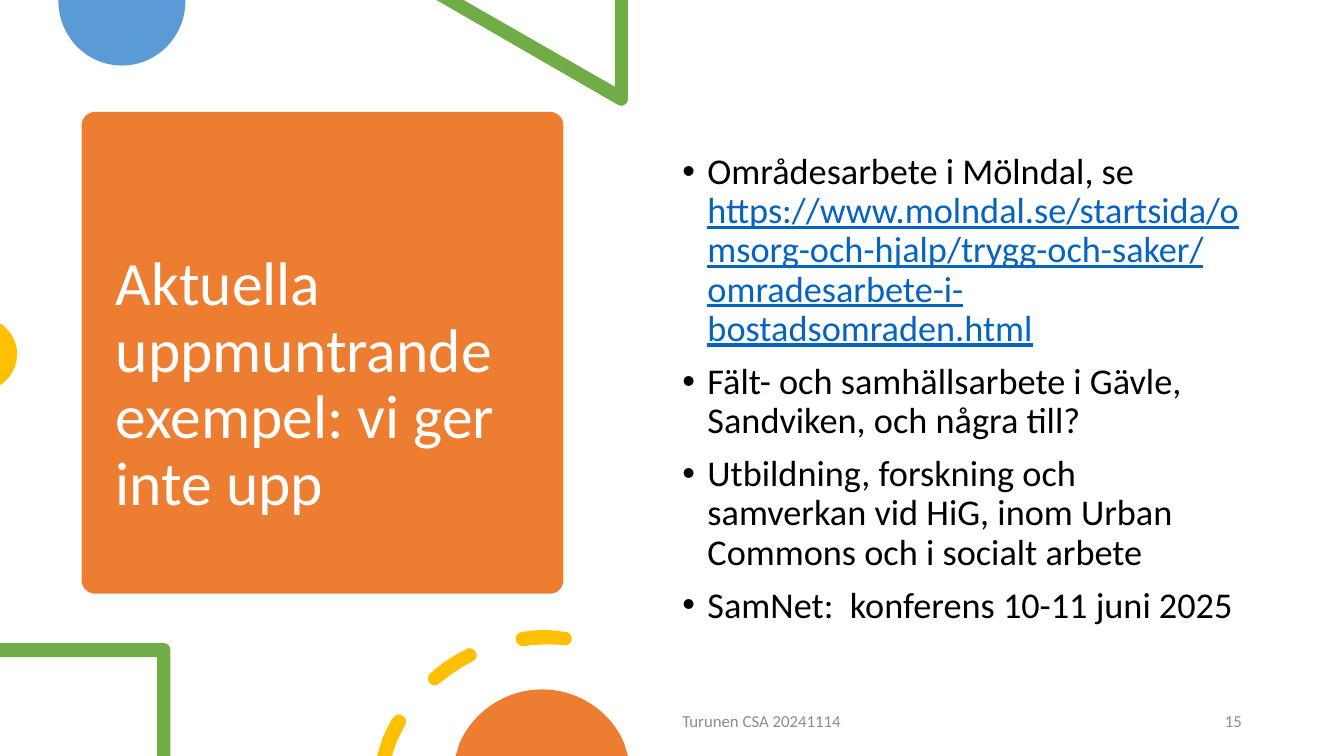
from dataclasses import dataclass

from lxml.etree import Element, SubElement
from pptx import Presentation
from pptx.dml.color import RGBColor
from pptx.enum.shapes import MSO_SHAPE
from pptx.enum.text import MSO_ANCHOR, PP_ALIGN
from pptx.oxml.ns import qn
from pptx.util import Pt

PX = 9144


@dataclass(frozen=True)
class Theme:
    font: str = "Calibri"
    orange: str = "ED7D31"
    blue: str = "5B9BD5"
    green: str = "70AD47"
    yellow: str = "FFC000"
    white: str = "FFFFFF"
    black: str = "000000"
    link: str = "0563C1"
    grey: str = "8C8C8C"
    title_size: int = 44
    body_size: float = 25.9
    footer_size: int = 12


THEME = Theme()

BLUE_CIRCLE = [
    [(126, 0), (0, 0), (0, 1), (0, 36, 28, 65, 63, 65), (98, 65, 126, 36, 126, 1)],
]
GREEN_TRIANGLE = [
    [(190, 0), (177, 0), (177, 86), (27, 0), (0, 0), (180, 104),
     (181, 105, 182, 105, 183, 105), (187, 105, 190, 102, 190, 98)],
]
YELLOW_CIRCLE = [
    [(0, 0), (0, 61), (2, 60), (11, 53, 17, 43, 17, 30), (17, 18, 11, 8, 2, 1)],
]
GREEN_SQUARE = [
    [(163, 0), (0, 0), (0, 14), (156, 14), (156, 112), (169, 112), (169, 7),
     (169, 3, 166, 0, 163, 0)],
]
YELLOW_DASHES = [
    [(23, 84), (20, 83, 18, 85, 16, 87), (12, 93, 9, 100, 6, 106), (0, 125),
     (15, 125), (19, 112), (22, 106, 25, 100, 28, 94), (30, 91, 29, 86, 25, 85),
     (25, 84, 24, 84, 23, 84)],
    [(91, 18), (91, 18, 90, 18, 89, 19), (76, 25, 64, 33, 53, 43),
     (50, 45, 50, 50, 52, 52), (53, 54, 55, 55, 57, 55), (59, 55, 61, 54, 62, 53),
     (72, 45, 83, 37, 95, 31), (99, 29, 100, 25, 98, 22), (97, 19, 94, 18, 91, 18)],
    [(166, 0), (158, 0, 151, 1, 144, 2), (140, 2, 137, 6, 138, 10),
     (138, 13, 141, 16, 145, 16), (145, 16, 145, 16, 146, 16),
     (159, 14, 172, 14, 186, 15), (189, 16, 193, 13, 193, 10),
     (194, 6, 191, 2, 188, 2), (188, 2, 187, 2, 187, 2), (180, 1, 173, 0, 166, 0)],
]
ORANGE_CIRCLE = [
    [(86, 0), (49, 0, 18, 22, 4, 53), (0, 66), (171, 66), (167, 53),
     (154, 22, 122, 0, 86, 0)],
]

DECORATIONS = [
    (BLUE_CIRCLE, 58, 0, THEME.blue),
    (GREEN_TRIANGLE, 433, 0, THEME.green),
    (YELLOW_CIRCLE, 0, 321, THEME.yellow),
    (GREEN_SQUARE, 0, 638, THEME.green),
    (YELLOW_DASHES, 374, 625, THEME.yellow),
    (ORANGE_CIRCLE, 452, 684, THEME.orange),
]

BULLETS = [
    [("Områdesarbete i Mölndal, se ", False),
     ("https://www.molndal.se/startsida/omsorg-och-hjalp/trygg-och-saker/"
      "omradesarbete-i-bostadsomraden.html", True)],
    [("Fält- och samhällsarbete i Gävle, Sandviken, och några till?", False)],
    [("Utbildning, forskning och samverkan vid HiG, inom Urban Commons "
      "och i socialt arbete", False)],
    [("SamNet:  konferens 10-11 juni 2025", False)],
]


def paint(shape, color):
    shape.shadow.inherit = False
    shape.fill.solid()
    shape.fill.fore_color.rgb = RGBColor.from_string(color)
    shape.line.fill.background()


def bend_segments(shape, contours):
    segments = [segment for contour in contours for segment in contour[1:]]
    lines = list(shape._element.iter(qn("a:lnTo")))
    for line, segment in zip(lines, segments):
        if len(segment) == 6:
            line.tag = qn("a:cubicBezTo")
            for position in (0, 1):
                x, y = segment[2 * position:2 * position + 2]
                control = Element(qn("a:pt"), x=str(x * PX), y=str(y * PX))
                line.insert(position, control)


def add_outline(slide, contours, left, top, color):
    builder = None
    for contour in contours:
        start, *rest = [(left + point[-2], top + point[-1]) for point in contour]
        if builder is None:
            builder = slide.shapes.build_freeform(*start, scale=PX)
            builder = slide.shapes.build_freeform(
                start[0] * PX, start[1] * PX, scale=1.0)
        else:
            builder.move_to(start[0] * PX, start[1] * PX)
        builder.add_line_segments([(x * PX, y * PX) for x, y in rest], close=True)
    shape = builder.convert_to_shape()
    bend_segments(shape, contours)
    paint(shape, color)


def add_bullet(paragraph, indent):
    properties = paragraph._p.get_or_add_pPr()
    properties.set("marL", str(indent * PX))
    properties.set("indent", str(-indent * PX))
    SubElement(properties, qn("a:buFont")).set("typeface", "Arial")
    SubElement(properties, qn("a:buChar")).set("char", "•")


def add_text(slide, box, paragraphs, size, color, anchor=MSO_ANCHOR.MIDDLE,
             align=PP_ALIGN.LEFT, line_spacing=1.0, space_before=0,
             margin_top=5, bullet_indent=0):
    shape = slide.shapes.add_textbox(*(length * PX for length in box))
    frame = shape.text_frame
    frame.word_wrap = True
    frame.vertical_anchor = anchor
    frame.margin_top = margin_top * PX
    for index, runs in enumerate(paragraphs):
        paragraph = frame.add_paragraph() if index else frame.paragraphs[0]
        if bullet_indent:
            add_bullet(paragraph, bullet_indent)
        paragraph.alignment = align
        paragraph.line_spacing = line_spacing
        if index and space_before:
            paragraph.space_before = Pt(space_before)
        for text, is_link in runs:
            run = paragraph.add_run()
            run.text = text
            run.font.name = THEME.font
            run.font.size = Pt(size)
            run.font.underline = is_link
            run.font.color.rgb = RGBColor.from_string(THEME.link if is_link else color)


def add_title_panel(slide, left, top, side):
    panel = slide.shapes.add_shape(
        MSO_SHAPE.ROUNDED_RECTANGLE, left * PX, top * PX, side * PX, side * PX)
    panel.adjustments[0] = 0.028
    paint(panel, THEME.orange)
    add_text(slide, (left + 24, top + 11, side - 47, side - 22),
             [[("Aktuella uppmuntrande exempel: vi ger inte upp", False)]],
             THEME.title_size, THEME.white, line_spacing=0.9, margin_top=70)


def add_body(slide, left, top, width, height):
    add_text(slide, (left, top, width, height), BULLETS, THEME.body_size, THEME.black,
             anchor=MSO_ANCHOR.TOP, line_spacing=0.9, space_before=10,
             margin_top=62, bullet_indent=25)


def add_footer(slide, left, top, width, height):
    number_width = 93
    add_text(slide, (left, top, 471, height), [[("Turunen CSA 20241114", False)]],
             THEME.footer_size, THEME.grey)
    add_text(slide, (left + width - number_width, top, number_width, height),
             [[("15", False)]], THEME.footer_size, THEME.grey, align=PP_ALIGN.RIGHT)


def main():
    presentation = Presentation()
    presentation.slide_width = round(1333.33 * PX)
    presentation.slide_height = 750 * PX
    slide = presentation.slides.add_slide(presentation.slide_layouts[6])
    add_title_panel(slide, 81, 111, 478)
    for decoration in DECORATIONS:
        add_outline(slide, *decoration)
    add_body(slide, 667, 90, 575, 535)
    add_footer(slide, 667, 695, 575, 40)
    presentation.save("out.pptx")


if __name__ == "__main__":
    main()
